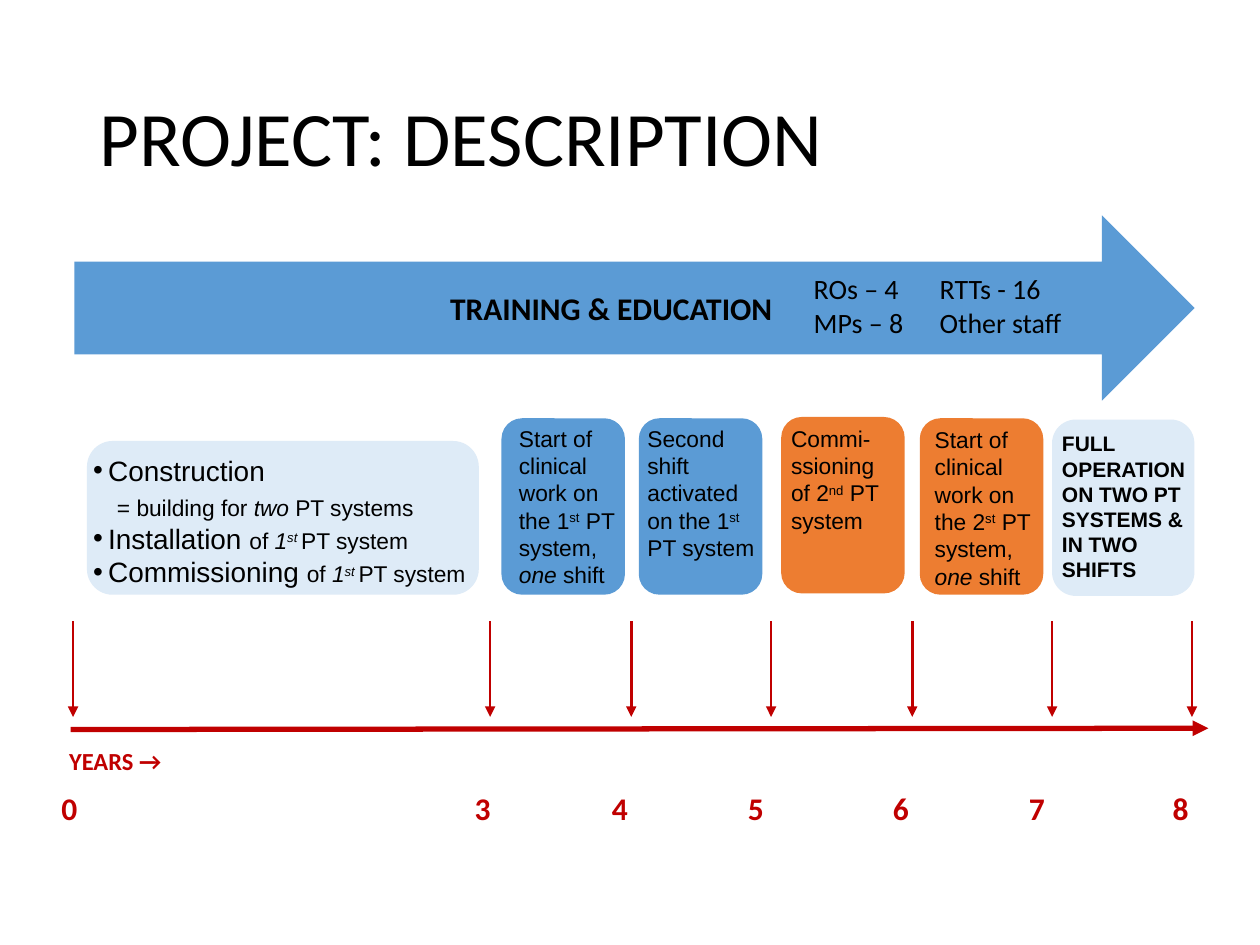
from lxml import etree
from pptx import Presentation
from pptx.dml.color import RGBColor
from pptx.enum import shapes, text
from pptx.oxml.ns import qn
from pptx.util import Inches, Pt

BLACK = RGBColor(0x00, 0x00, 0x00)
RED = RGBColor(0xC0, 0x00, 0x00)
BLUE = RGBColor(0x5B, 0x9B, 0xD5)
ORANGE = RGBColor(0xED, 0x7D, 0x31)
PALE = RGBColor(0xDE, 0xEB, 0xF7)

ITALIC = {"italic": True}
SUPER = {"base": 30}


def add_run(p, words, font="Arial", size=13, color=BLACK, bold=False,
            italic=False, base=0):
    r = p.add_run()
    r.text = words
    f = r.font
    f.name, f.size, f.bold, f.italic = font, Pt(size), bold, italic
    f.color.rgb = color
    if base:
        r._r.get_or_add_rPr().set("baseline", str(base * 1000))


def add_runs(p, parts, **fmt):
    """Each part is a string, or a (string, format changes) pair."""
    for part in parts:
        words, changes = (part, {}) if isinstance(part, str) else part
        add_run(p, words, **{**fmt, **changes})


def add_text(s, at, *paragraphs, wrap=True, align=None, **fmt):
    tf = s.shapes.add_textbox(*map(Inches, at)).text_frame
    tf.word_wrap = wrap
    for i, parts in enumerate(paragraphs):
        p = tf.add_paragraph() if i else tf.paragraphs[0]
        p.alignment = align
        add_runs(p, parts, **fmt)
    return tf


def add_box(s, kind, at, fill):
    sp = s.shapes.add_shape(kind, *map(Inches, at))
    sp.shadow.inherit = False
    sp.fill.solid()
    sp.fill.fore_color.rgb = fill
    sp.line.fill.background()
    return sp


def add_arrow(s, x1, y1, x2, y2, width):
    c = s.shapes.add_connector(shapes.MSO_CONNECTOR.STRAIGHT,
                               *map(Inches, (x1, y1, x2, y2)))
    c.line.color.rgb = RED
    c.line.width = Pt(width)
    etree.SubElement(c.line._get_or_add_ln(), qn("a:tailEnd"), type="triangle")
    etree.SubElement(c._element.spPr, qn("a:effectLst"))


def set_indent(p, left, first=0, bullet=None):
    pPr = p._p.get_or_add_pPr()
    pPr.set("marL", str(Inches(left)))
    pPr.set("indent", str(Inches(first)))
    if bullet:
        etree.SubElement(pPr, qn("a:buFont"), typeface="Arial")
        etree.SubElement(pPr, qn("a:buChar"), char=bullet)


def add_title(s, words):
    sp = s.shapes.title
    sp.left, sp.top, sp.width, sp.height = map(Inches, (0.69, 0.4, 8.62, 1.45))
    tf = sp.text_frame
    tf.vertical_anchor = text.MSO_ANCHOR.MIDDLE
    p = tf.paragraphs[0]
    p.alignment = text.PP_ALIGN.LEFT
    p.line_spacing = 0.9
    add_run(p, words, font="Calibri", size=44)


def add_timeline(s):
    add_arrow(s, 0.56, 5.79, 9.59, 5.78, 3)
    # Year, arrow position, label centre
    years = [(0, 0.58, 0.55), (3, 3.89, 3.83), (4, 5.01, 4.92), (5, 6.12, 6.0),
             (6, 7.24, 7.15), (7, 8.35, 8.23), (8, 9.46, 9.37)]
    for year, x, center in years:
        add_arrow(s, x, 4.93, x, 5.69, 1.5)
        add_text(s, (center - 0.2, 6.21, 0.4, 0.4), [str(year)],
                 align=text.PP_ALIGN.CENTER, font="Calibri", size=18,
                 color=RED, bold=True)
    add_text(s, (0.45, 5.87, 0.96, 0.34), ["YEARS →"], wrap=False,
             font="Calibri", size=14, color=RED, bold=True)


def add_first_phase(s):
    add_box(s, shapes.MSO_SHAPE.ROUNDED_RECTANGLE, (0.69, 3.5, 3.11, 1.22), PALE)
    first_system = ["of ", ("1", ITALIC), ("st ", {**ITALIC, **SUPER}), "PT system"]
    big = {"size": 16}
    tf = add_text(s, (0.45, 3.55, 3.39, 1.13),
                  [("Construction", big)],
                  ["= building for ", ("two", ITALIC), " PT systems"],
                  [("Installation ", big), *first_system],
                  [("Commissioning ", big), *first_system])
    for i, p in enumerate(tf.paragraphs):
        if i == 1:
            p.space_before = Pt(4)
            set_indent(p, 0.38)
        else:
            set_indent(p, 0.31, -0.12, "•")


def add_milestones(s):
    def clinical_start(number):
        return [f"Start of clinical work on the {number}", ("st", SUPER),
                " PT system, ", ("one", ITALIC), " shift"]

    second_shift = ["Second shift activated on the 1", ("st", SUPER), " PT system"]
    commissioning = ["Commi-ssioning of 2", ("nd", SUPER), " PT system"]
    full = [("FULL OPERATION ON TWO PT SYSTEMS & IN TWO SHIFTS",
             {"size": 12, "bold": True})]
    # Card left, top, width and fill; text left, top, width, height and wording
    cards = [
        (3.98, 3.32, 0.98, BLUE, (4.02, 3.32, 0.99, 1.41), clinical_start(1)),
        (5.07, 3.32, 0.98, BLUE, (5.04, 3.32, 1.13, 1.19), second_shift),
        (6.2, 3.31, 0.98, ORANGE, (6.18, 3.32, 0.93, 0.98), commissioning),
        (7.3, 3.32, 0.98, ORANGE, (7.32, 3.33, 0.99, 1.41), clinical_start(2)),
        (8.35, 3.33, 1.13, PALE, (8.33, 3.37, 1.21, 1.31), full),
    ]
    for left, top, width, fill, text_at, parts in cards:
        add_box(s, shapes.MSO_SHAPE.ROUNDED_RECTANGLE, (left, top, width, 1.4), fill)
        add_text(s, text_at, parts)


def add_training(s):
    sp = add_box(s, shapes.MSO_SHAPE.RIGHT_ARROW, (0.59, 1.71, 8.89, 1.47), BLUE)
    tf = sp.text_frame
    tf.vertical_anchor = text.MSO_ANCHOR.MIDDLE
    p = tf.paragraphs[0]
    p.alignment = text.PP_ALIGN.CENTER
    add_run(p, "TRAINING & EDUCATION", font="Calibri", size=18, bold=True)
    add_text(s, (6.36, 2.11, 2.19, 0.64), ["ROs – 4\tRTTs - 16"],
             ["MPs – 8\tOther staff"], wrap=False, font="Calibri", size=16)


def main():
    prs = Presentation()
    prs.slide_width, prs.slide_height = Inches(10), Inches(7.5)
    s = prs.slides.add_slide(prs.slide_layouts[5])
    add_title(s, "PROJECT: DESCRIPTION")
    add_timeline(s)
    add_first_phase(s)
    add_milestones(s)
    add_training(s)
    prs.save("out.pptx")


if __name__ == "__main__":
    main()
